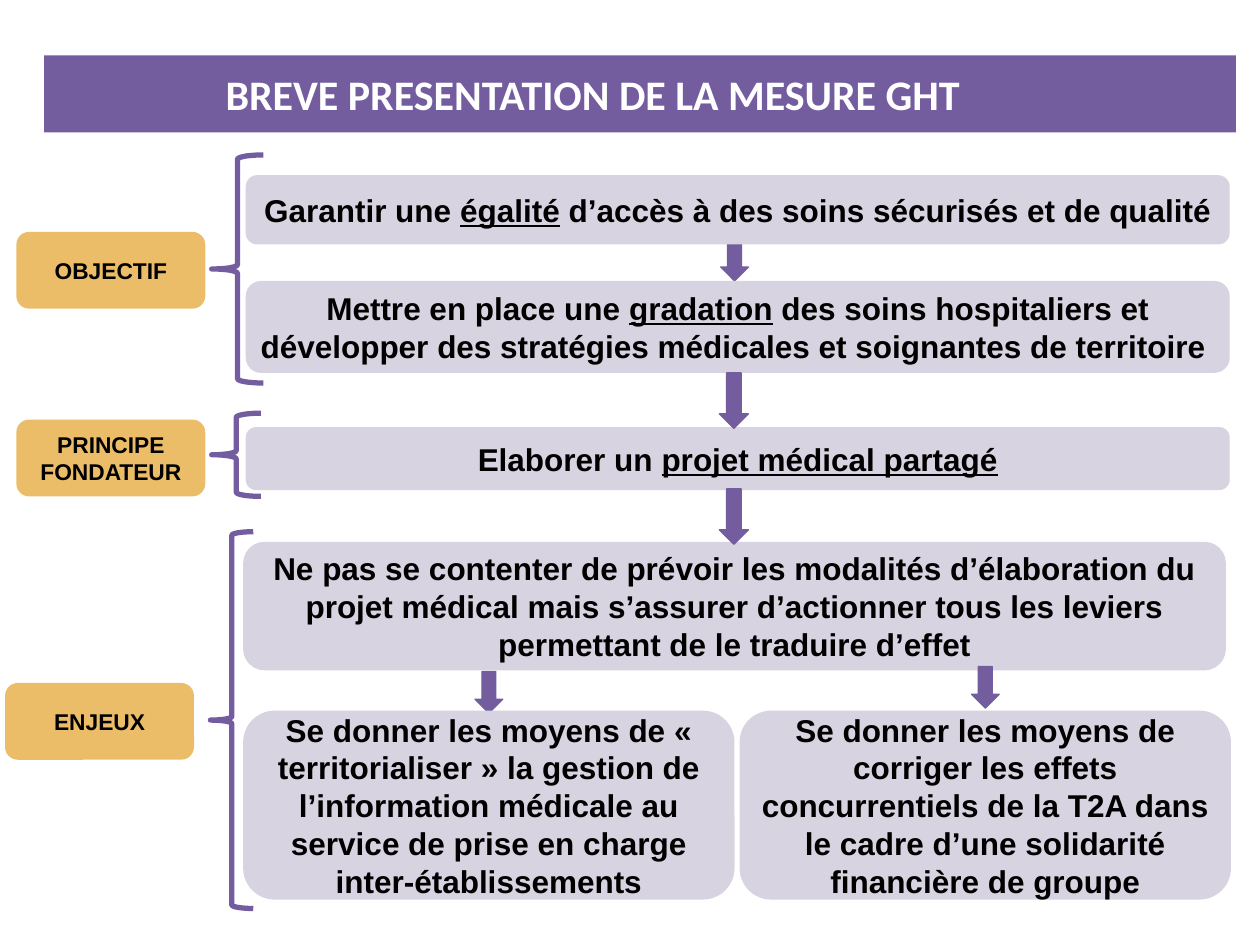
"""Build the slide that presents the aims, principle and stakes of the GHT measure."""
from dataclasses import dataclass

from pptx import Presentation
from pptx.dml.color import RGBColor
from pptx.enum.shapes import MSO_SHAPE as Shape
from pptx.enum.text import MSO_ANCHOR as Anchor, PP_ALIGN as Align
from pptx.util import Inches, Pt


@dataclass(frozen=True)
class Theme:
    purple: RGBColor = RGBColor.from_string("735D9F")
    lilac: RGBColor = RGBColor.from_string("D8D3E0")
    gold: RGBColor = RGBColor.from_string("ECBD68")
    white: RGBColor = RGBColor.from_string("FFFFFF")
    black: RGBColor = RGBColor.from_string("000000")
    title_font: str = "Calibri"
    body_font: str = "Arial"
    title_size: Pt = Pt(24)
    body_size: Pt = Pt(18)
    label_size: Pt = Pt(13)
    brace_width: Pt = Pt(3)
    arrow_width: Pt = Pt(0.75)


THEME = Theme()

PANELS = [
    ((1.95, 1.39, 7.81, 0.55), "Garantir une _égalité_ d’accès à des soins sécurisés et de qualité"),
    ((1.95, 2.23, 7.81, 0.73),
     "Mettre en place une _gradation_ des soins hospitaliers et développer "
     "des stratégies médicales et soignantes de territoire "),
    ((1.95, 3.39, 7.81, 0.5), "Elaborer un _projet médical partagé_"),
    ((1.93, 4.3, 7.8, 1.02),
     "Ne pas se contenter de prévoir les modalités d’élaboration du projet médical "
     "mais s’assurer d’actionner tous les leviers permettant de le traduire d’effet"),
    ((1.93, 5.64, 3.9, 1.5),
     "Se donner les moyens de « territorialiser » la gestion de l’information médicale "
     "au service de prise en charge inter-établissements"),
    ((5.87, 5.64, 3.9, 1.5),
     "Se donner les moyens de corriger les effets concurrentiels de la T2A "
     "dans le cadre d’une solidarité financière de groupe"),
]
LABELS = [(0.13, 1.84, "OBJECTIF"), (0.13, 3.33, "PRINCIPE FONDATEUR"), (0.04, 5.42, "ENJEUX")]
BRACES = [(1.68, 1.23, 0.41, 1.81), (1.68, 3.28, 0.39, 0.66), (1.67, 4.22, 0.34, 2.99)]
ARROWS_BEHIND = [(5.72, 1.9, 0.22, 0.33), (3.77, 5.33, 0.22, 0.33)]
ARROWS_IN_FRONT = [(5.71, 2.96, 0.23, 0.44), (5.71, 3.88, 0.23, 0.44), (7.71, 5.29, 0.22, 0.33)]


def apply(target, formats):
    for name, value in formats.items():
        setattr(target, name, value)


def add_shape(page, kind, area, fill=None, line=None, width=None):
    shape = page.shapes.add_shape(kind, *map(Inches, area))
    shape.shadow.inherit = False
    if fill is None:
        shape.fill.background()
    else:
        shape.fill.solid()
        shape.fill.fore_color.rgb = fill
    if line is None:
        shape.line.fill.background()
    else:
        shape.line.color.rgb = line
        shape.line.width = width
    return shape


def write(box, text, size, font=THEME.body_font, color=THEME.black, align=Align.CENTER, left=0.07):
    frame = box.text_frame
    apply(frame, {
        "word_wrap": True, "vertical_anchor": Anchor.MIDDLE,
        "margin_left": Inches(left), "margin_right": Inches(0.07),
        "margin_top": Inches(0.04), "margin_bottom": Inches(0.04),
    })
    para = frame.paragraphs[0]
    para.alignment = align
    for index, part in enumerate(text.split("_")):
        if part:
            span = para.add_run()
            span.text = part
            apply(span.font, {"name": font, "size": size, "bold": True, "underline": index % 2 == 1})
            span.font.color.rgb = color


def add_title(page, text):
    banner = add_shape(page, Shape.RECTANGLE, (0.35, 0.44, 9.46, 0.61), THEME.purple)
    write(banner, text, THEME.title_size, THEME.title_font, THEME.white, Align.LEFT, 1.44)


def add_card(page, area, text, fill, size):
    write(add_shape(page, Shape.ROUNDED_RECTANGLE, area, fill), text, size)


def add_arrows(page, areas):
    for area in areas:
        add_shape(page, Shape.DOWN_ARROW, area, THEME.purple, THEME.purple, THEME.arrow_width)


def main():
    deck = Presentation()
    apply(deck, {"slide_width": Inches(10), "slide_height": Inches(7.5)})
    page = deck.slides.add_slide(deck.slide_layouts[6])
    add_title(page, "BREVE PRESENTATION DE LA MESURE GHT")
    add_arrows(page, ARROWS_BEHIND)
    for area, text in PANELS:
        add_card(page, area, text, THEME.lilac, THEME.body_size)
    for area in BRACES:
        add_shape(page, Shape.LEFT_BRACE, area, line=THEME.purple, width=THEME.brace_width)
    for left, top, text in LABELS:
        add_card(page, (left, top, 1.5, 0.61), text, THEME.gold, THEME.label_size)
    add_arrows(page, ARROWS_IN_FRONT)
    deck.save("out.pptx")


if __name__ == "__main__":
    main()
